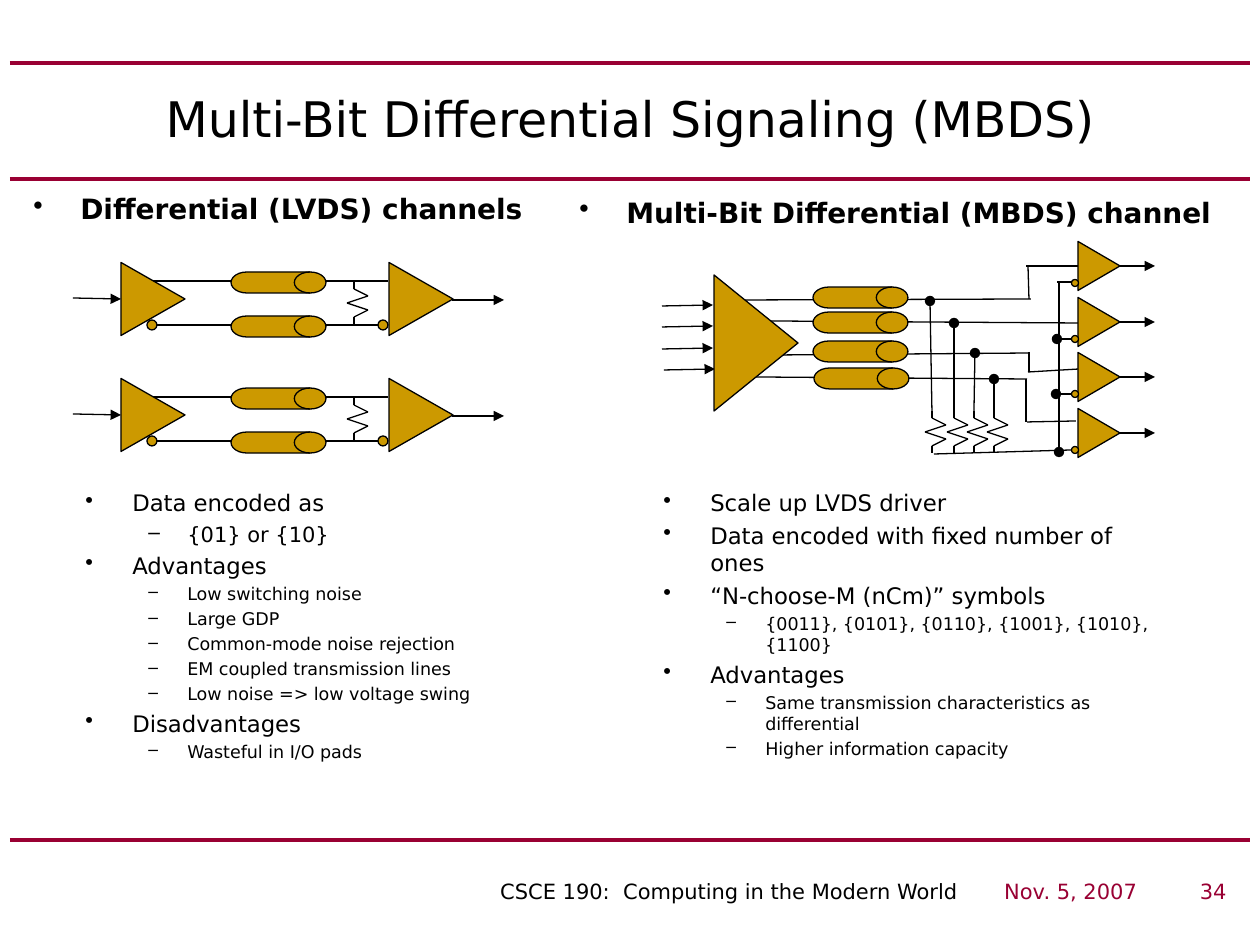
import itertools
from typing import NamedTuple, Optional

import lxml.etree
import pptx
import pptx.dml.color
import pptx.enum.shapes
import pptx.enum.text
import pptx.oxml.ns
import pptx.util

PX = pptx.util.Inches(1) / 126
FONT = "DejaVu Sans"
BLACK = pptx.dml.color.RGBColor(0x00, 0x00, 0x00)
GARNET = pptx.dml.color.RGBColor(0x99, 0x00, 0x33)
GOLD = pptx.dml.color.RGBColor(0xCC, 0x99, 0x00)
SHAPE = pptx.enum.shapes.MSO_SHAPE
ALIGN = pptx.enum.text.PP_ALIGN


class Box(NamedTuple):
    left: int
    top: int
    width: int
    height: int


class Wire(NamedTuple):
    x1: int
    y1: int
    x2: int
    y2: int
    end: Optional[str] = None


class Item(NamedTuple):
    text: str
    size: int
    level: int = 0
    bold: bool = False


class BulletStyle(NamedTuple):
    mark: str
    margin: int
    hang: int


BULLETS = (BulletStyle("•", 47, 47), BulletStyle("–", 102, 39))


def emu(px: float) -> int:
    return round(px * PX)


def add_element(parent, tag: str, **attributes: str) -> None:
    lxml.etree.SubElement(parent, pptx.oxml.ns.qn(tag), **attributes)


def draw_wire(slide, wire: Wire, color=BLACK, width: float = 0.75) -> None:
    connector = slide.shapes.add_connector(
        pptx.enum.shapes.MSO_CONNECTOR.STRAIGHT, *map(emu, wire[:4]))
    connector.line.color.rgb = color
    connector.line.width = pptx.util.Pt(width)
    if wire.end:
        add_element(connector.line._get_or_add_ln(), "a:tailEnd", type=wire.end)
    add_element(connector._element.spPr, "a:effectLst")


def draw_part(slide, kind, box: Box, rotation: int = 0) -> None:
    part = slide.shapes.add_shape(kind, *map(emu, box))
    part.rotation = rotation
    part.shadow.inherit = False
    part.fill.solid()
    part.fill.fore_color.rgb = GOLD
    part.line.color.rgb = BLACK
    part.line.width = pptx.util.Pt(0.75)


def draw_amplifier(slide, left: int, middle: int, base: int, depth: int) -> None:
    """Triangle pointing right; its box is given before the quarter turn."""
    box = Box(left + (depth - base) / 2, middle - depth / 2, base, depth)
    draw_part(slide, SHAPE.ISOSCELES_TRIANGLE, box, 90)


def draw_bubble(slide, x: int, y: int, size: int) -> None:
    draw_part(slide, SHAPE.OVAL, Box(x - size / 2, y - size / 2, size, size))


def draw_cable(slide, left: int, top: int) -> None:
    draw_part(slide, SHAPE.FLOWCHART_DIRECT_ACCESS_STORAGE, Box(left, top, 95, 21))


def draw_resistor(slide, x: int, top: int) -> None:
    points = [(x + dx, top + 7 * step)
              for step, dx in enumerate((0, 0, 14, -7, 14, 0, 0))]
    for start, stop in itertools.pairwise(points):
        draw_wire(slide, Wire(*start, *stop))


def draw_lvds_channel(slide, middle: int) -> None:
    high, low = middle - 18, middle + 26
    for wire in (Wire(73, middle - 1, 121, middle, "triangle"),
                 Wire(152, high, 388, high), Wire(157, low, 388, low),
                 Wire(452, middle + 1, 504, middle + 1, "triangle")):
        draw_wire(slide, wire)
    for left, bubble_x in ((121, 152), (389, 383)):
        draw_amplifier(slide, left, middle, 73, 64)
        draw_bubble(slide, bubble_x, low, 10)
    for top in (middle - 27, middle + 17):
        draw_cable(slide, 231, top)
    draw_resistor(slide, 354, middle - 17)


MBDS_WIRES = (
    # driver to receivers
    Wire(745, 300, 1031, 299), Wire(769, 321, 1079, 323),
    Wire(776, 355, 1029, 353), Wire(756, 377, 1027, 379),
    Wire(1028, 266, 1029, 299), Wire(1079, 266, 1026, 266),
    Wire(1029, 352, 1029, 372), Wire(1079, 369, 1028, 372),
    Wire(1026, 379, 1026, 422), Wire(1027, 422, 1076, 421),
    # shared reference
    Wire(1071, 450, 934, 454), Wire(1059, 283, 1059, 452, "oval"),
    Wire(1075, 282, 1057, 282), Wire(1074, 339, 1057, 339, "oval"),
    Wire(1074, 394, 1056, 394, "oval"),
)
TERMINATIONS = (Wire(932, 411, 930, 301, "oval"), Wire(954, 411, 954, 323, "oval"),
                Wire(974, 411, 975, 353, "oval"), Wire(994, 411, 994, 379, "oval"))


def draw_mbds_channel(slide) -> None:
    for wire in MBDS_WIRES:
        draw_wire(slide, wire)
    for left, top in ((813, 287), (813, 312), (813, 341), (814, 368)):
        draw_cable(slide, left, top)
    for stem in TERMINATIONS:
        draw_resistor(slide, stem.x1, stem.y1)
        draw_wire(slide, stem)
    for left, y in ((662, 306), (662, 327), (662, 349), (664, 370)):
        draw_wire(slide, Wire(left, y, left + 51, y - 1, "triangle"))
    draw_amplifier(slide, 714, 343, 136, 84)
    for middle in (266, 322, 377, 433):
        draw_amplifier(slide, 1078, middle, 49, 42)
        draw_bubble(slide, 1075, middle + 17, 7)
        draw_wire(slide, Wire(1120, middle, 1155, middle, "triangle"))


def add_text_frame(slide, box: Box):
    frame = slide.shapes.add_textbox(*map(emu, box)).text_frame
    frame.word_wrap = True
    return frame


def format_font(font, size: int, color=BLACK, bold: bool = False) -> None:
    font.name = FONT
    font.size = pptx.util.Pt(size)
    font.color.rgb = color
    font.bold = bold


def add_list(slide, box: Box, items: tuple[Item, ...], spacing: float = 1.0) -> None:
    frame = add_text_frame(slide, box)
    frame.text = "\n".join(item.text for item in items)
    for index, (paragraph, item) in enumerate(zip(frame.paragraphs, items)):
        style = BULLETS[item.level]
        paragraph.level = item.level
        properties = paragraph._p.get_or_add_pPr()
        properties.set("marL", str(emu(style.margin)))
        properties.set("indent", str(-emu(style.hang)))
        add_element(properties, "a:buChar", char=style.mark)
        paragraph.line_spacing = spacing
        paragraph.space_before = pptx.util.Pt(round(0.23 * item.size, 1) if index else 0)
        format_font(paragraph.runs[0].font, item.size, bold=item.bold)


LVDS_POINTS = (
    Item("Data encoded as", 13), Item("{01} or {10}", 12, 1),
    Item("Advantages", 13), Item("Low switching noise", 10, 1),
    Item("Large GDP", 10, 1), Item("Common-mode noise rejection", 10, 1),
    Item("EM coupled transmission lines", 10, 1),
    Item("Low noise => low voltage swing", 10, 1),
    Item("Disadvantages", 13), Item("Wasteful in I/O pads", 10, 1))
MBDS_POINTS = (
    Item("Scale up LVDS driver", 13),
    Item("Data encoded with fixed number of ones", 13),
    Item("“N-choose-M (nCm)” symbols", 13),
    Item("{0011}, {0101}, {0110}, {1001}, {1010}, {1100}", 10, 1),
    Item("Advantages", 13),
    Item("Same transmission characteristics as differential", 10, 1),
    Item("Higher information capacity", 10, 1))


def main() -> None:
    deck = pptx.Presentation()
    deck.slide_width, deck.slide_height = emu(1260), emu(945)
    slide = deck.slides.add_slide(deck.slide_layouts[6])

    for y in (840, 179, 63):
        draw_wire(slide, Wire(10, y, 1250, y), GARNET, 2.25)

    footer = add_text_frame(slide, Box(357, 872, 882, 42)).paragraphs[0]
    footer.alignment = ALIGN.RIGHT
    for text, color in (("CSCE 190:  Computing in the Modern World", BLACK),
                        ("\tNov. 5, 2007\t 34", GARNET)):
        run = footer.add_run()
        run.text = text
        format_font(run.font, 12, color)

    title = add_text_frame(slide, Box(63, 63, 1134, 110))
    title.vertical_anchor = pptx.enum.text.MSO_ANCHOR.MIDDLE
    title.text = "Multi-Bit Differential Signaling (MBDS)"
    title.paragraphs[0].alignment = ALIGN.CENTER
    format_font(title.paragraphs[0].runs[0].font, 28)

    add_list(slide, Box(21, 189, 525, 63),
             (Item("Differential (LVDS) channels", 16, bold=True),), 0.9)
    for middle in (299, 415):
        draw_lvds_channel(slide, middle)
    add_list(slide, Box(73, 483, 514, 336), LVDS_POINTS)

    add_list(slide, Box(567, 189, 672, 63),
             (Item("Multi-Bit Differential (MBDS) channel", 16, bold=True),))
    draw_mbds_channel(slide)
    add_list(slide, Box(651, 483, 514, 336), MBDS_POINTS)
    deck.save("out.pptx")


if __name__ == "__main__":
    main()
